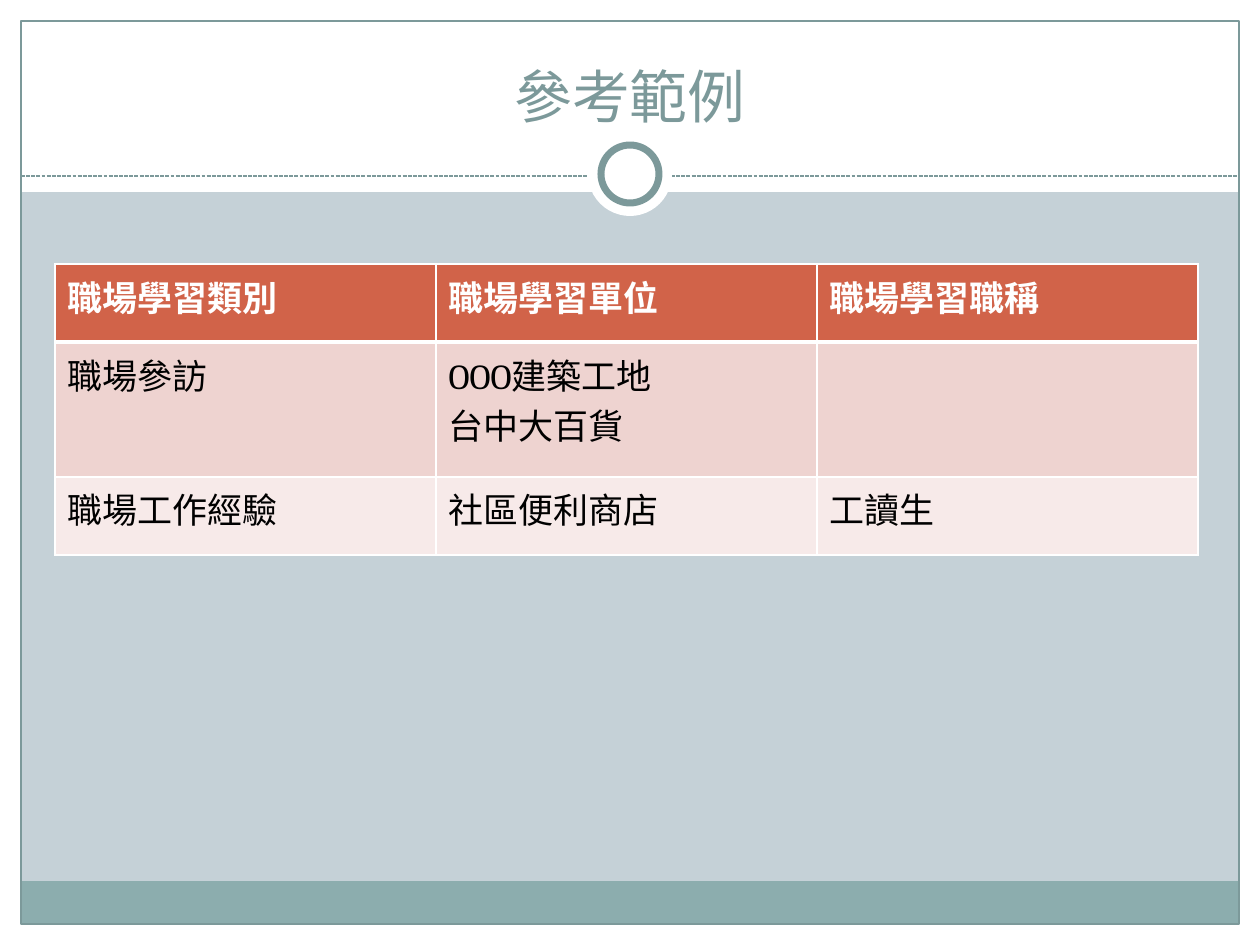
import pptx
import pptx.dml.color
import pptx.enum.dml
import pptx.enum.shapes
import pptx.enum.text
import pptx.oxml
import pptx.oxml.ns
import pptx.util

RGB = pptx.dml.color.RGBColor
WHITE = RGB(0xFF, 0xFF, 0xFF)
BLACK = RGB(0x00, 0x00, 0x00)
MIST = RGB(0xC5, 0xD1, 0xD7)
TEAL = RGB(0x8C, 0xAD, 0xAE)
SLATE = RGB(0x7C, 0x99, 0x9A)
RUST = RGB(0xD1, 0x63, 0x49)
ROSE = RGB(0xEE, 0xD3, 0xD0)
BLUSH = RGB(0xF7, 0xEA, 0xE9)

WIDTH, HEIGHT, EDGE = 1260, 945, 21
PX = 914400 / 126
SHAPE = pptx.enum.shapes.MSO_SHAPE

COLUMN_WIDTH = 381
ROW_HEIGHTS = [78, 135, 78]
ROW_FILLS = [RUST, ROSE, BLUSH]
ROWS = [
    ["職場學習類別", "職場學習單位", "職場學習職稱"],
    ["職場參訪", "OOO建築工地\n台中大百貨", ""],
    ["職場工作經驗", "社區便利商店", "工讀生"],
]


def emu(px):
    return pptx.util.Emu(round(px * PX))


class Painter:
    font_name = "Cambria"

    def __init__(self, page):
        self.page = page

    def shape(self, kind, left, top, width, height, fill=None, line=None, weight=0.75):
        shape = self.page.shapes.add_shape(kind, *map(emu, (left, top, width, height)))
        shape.shadow.inherit = False
        if fill is None:
            shape.fill.background()
        else:
            shape.fill.solid()
            shape.fill.fore_color.rgb = fill
        if line is None:
            shape.line.fill.background()
        else:
            shape.line.color.rgb = line
            shape.line.width = pptx.util.Pt(weight)

    def dashed_line(self, left, right, y, color):
        line = self.page.shapes.add_connector(
            pptx.enum.shapes.MSO_CONNECTOR.STRAIGHT, emu(left), emu(y), emu(right), emu(y))
        line.line.color.rgb = color
        line.line.width = pptx.util.Pt(0.75)
        line.line.dash_style = pptx.enum.dml.MSO_LINE.SQUARE_DOT
        properties = line._element.spPr
        properties.append(pptx.oxml.parse_xml(
            f"<a:effectLst {pptx.oxml.ns.nsdecls('a')}/>"))

    def set_text(self, frame, text, size, color, bold=False, align=None):
        frame.text = text
        style = {"name": self.font_name, "size": pptx.util.Pt(size), "bold": bold}
        for para in frame.paragraphs:
            para.alignment = align
            for font in [para.font] + [span.font for span in para.runs]:
                for key, value in style.items():
                    setattr(font, key, value)
                font.color.rgb = color

    def title(self, text, left, top, width, height):
        box = self.page.shapes.add_textbox(*map(emu, (left, top, width, height)))
        frame = box.text_frame
        frame.word_wrap = True
        frame.vertical_anchor = pptx.enum.text.MSO_ANCHOR.BOTTOM
        self.set_text(frame, text, 33, SLATE, align=pptx.enum.text.PP_ALIGN.CENTER)

    def border(self, cell, weights):
        """Draw white cell edges; weights maps L, R, T, B to points."""
        properties = cell._tc.get_or_add_tcPr()
        for position, (side, weight) in enumerate(weights.items()):
            properties.insert(position, pptx.oxml.parse_xml(
                f"<a:ln{side} {pptx.oxml.ns.nsdecls('a')} w='{pptx.util.Pt(weight)}'>"
                f"<a:solidFill><a:srgbClr val='{WHITE}'/></a:solidFill></a:ln{side}>"))

    def table(self, left, top):
        count = len(ROWS[0])
        grid = self.page.shapes.add_table(
            len(ROWS), count, emu(left), emu(top),
            emu(COLUMN_WIDTH * count), emu(sum(ROW_HEIGHTS))).table
        for column in grid.columns:
            column.width = emu(COLUMN_WIDTH)
        for index, texts in enumerate(ROWS):
            grid.rows[index].height = emu(ROW_HEIGHTS[index])
            header = index == 0
            weights = {"L": 1, "R": 1, "T": 3 if index == 1 else 1, "B": 3 if header else 1}
            for cell, text in zip(grid.rows[index].cells, texts):
                cell.fill.solid()
                cell.fill.fore_color.rgb = ROW_FILLS[index]
                self.border(cell, weights)
                self.set_text(cell.text_frame, text, 20, WHITE if header else BLACK, header)


def main():
    deck = pptx.Presentation()
    deck.slide_width, deck.slide_height = emu(WIDTH), emu(HEIGHT)
    page = deck.slides.add_slide(deck.slide_layouts[6])
    page.background.fill.solid()
    page.background.fill.fore_color.rgb = MIST
    painter = Painter(page)

    margins = [(0, HEIGHT - EDGE, WIDTH, EDGE), (0, 0, WIDTH, 192),
               (0, 0, EDGE, HEIGHT), (WIDTH - EDGE, 0, EDGE, HEIGHT)]
    for margin in margins:
        painter.shape(SHAPE.RECTANGLE, *margin, fill=WHITE)
    inner = WIDTH - 2 * EDGE
    painter.shape(SHAPE.RECTANGLE, EDGE, 881, inner, 43, fill=TEAL)
    painter.shape(SHAPE.RECTANGLE, EDGE, EDGE, inner, HEIGHT - 2 * EDGE, line=SLATE)
    painter.dashed_line(EDGE, WIDTH - EDGE, 176, SLATE)
    for size, line in [(84, None), (58, SLATE)]:
        painter.shape(SHAPE.OVAL, (WIDTH - size) // 2, 174 - size // 2, size, size,
                      fill=WHITE, line=line, weight=4)

    painter.title("參考範例", 42, 32, 1176, 104)
    painter.table(55, 264)
    deck.save("out.pptx")


if __name__ == "__main__":
    main()
